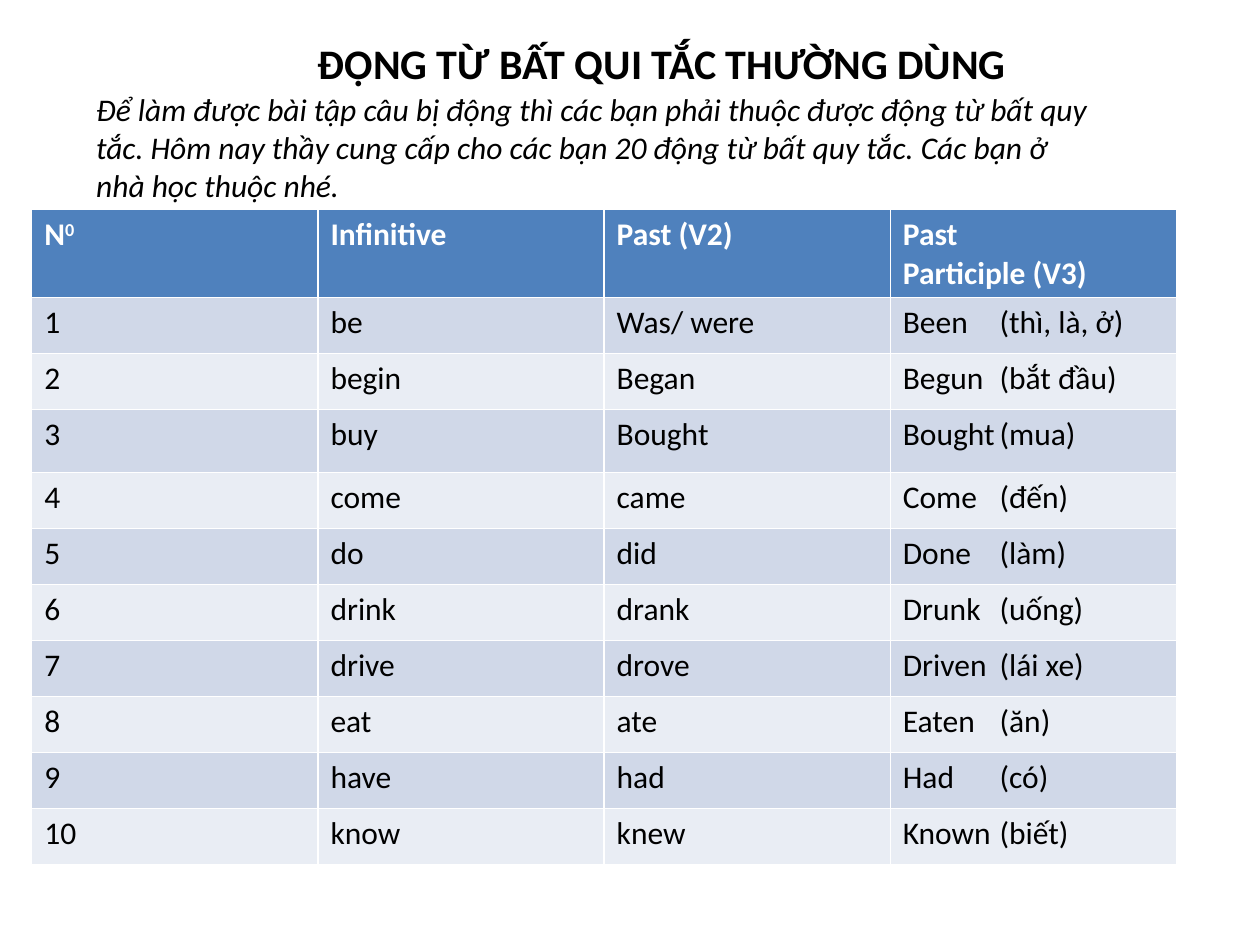
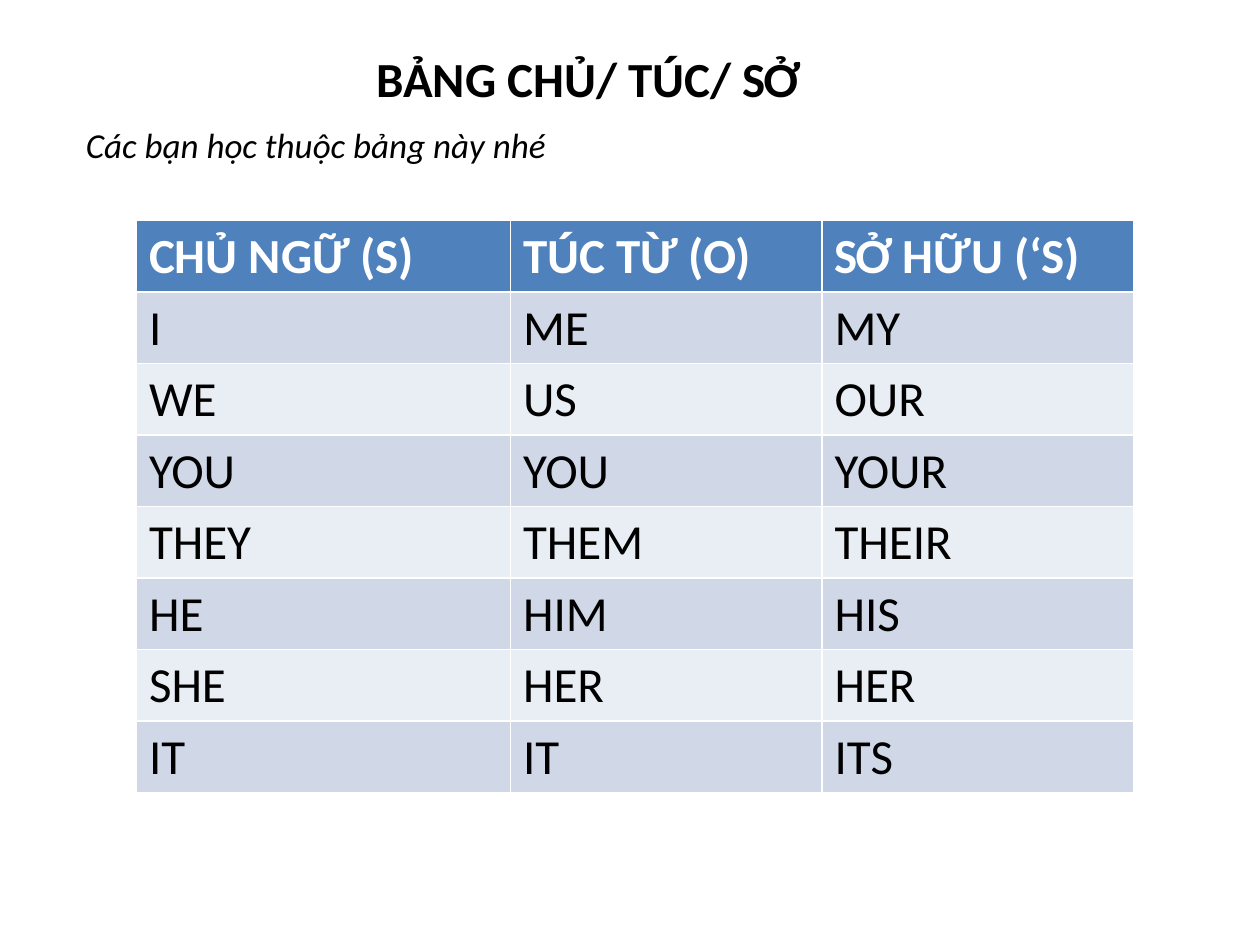
from dataclasses import dataclass

import pptx
import pptx.dml.color
import pptx.enum.text
import pptx.oxml
import pptx.oxml.ns
import pptx.presentation
import pptx.slide
import pptx.text.text
import pptx.util
from lxml import etree

Cm = pptx.util.Cm
FONT = "Calibri"
HUES = {"head": "4F81BD", "odd": "D0D8E8", "even": "E9EDF4", "ink": "000000", "white": "FFFFFF"}


@dataclass
class Label:
    text: str
    left: float
    top: float
    width: float
    height: float
    size: int
    bold: bool = False
    slant: bool = False
    center: bool = False


@dataclass
class Grid:
    left: float
    top: float
    widths: list[float]
    heights: list[float]
    size: int
    rows: list[tuple[str, ...]]
    tab: float = 0


VERBS = [
    ("be", "Was/ were", "Been", "thì, là, ở"),
    ("begin", "Began", "Begun", "bắt đầu"),
    ("buy", "Bought", "Bought", "mua"),
    ("come", "came", "Come", "đến"),
    ("do", "did", "Done", "làm"),
    ("drink", "drank", "Drunk", "uống"),
    ("drive", "drove", "Driven", "lái xe"),
    ("eat", "ate", "Eaten", "ăn"),
    ("have", "had", "Had", "có"),
    ("know", "knew", "Known", "biết"),
]

PRONOUNS = [
    ("CHỦ NGỮ (S)", "TÚC TỪ (O)", "SỞ HỮU (‘S)"),
    ("I", "ME", "MY"),
    ("WE", "US", "OUR"),
    ("YOU", "YOU", "YOUR"),
    ("THEY", "THEM", "THEIR"),
    ("HE", "HIM", "HIS"),
    ("SHE", "HER", "HER"),
    ("IT", "IT", "ITS"),
]


def tint(hue: str) -> pptx.dml.color.RGBColor:
    return pptx.dml.color.RGBColor.from_string(HUES[hue])


def style(frame: pptx.text.text.TextFrame, size: int, hue: str,
          bold: bool = False, slant: bool = False) -> None:
    for para in frame.paragraphs:
        for run in para.runs:
            run.font.name = FONT
            run.font.size = pptx.util.Pt(size)
            run.font.bold = bold
            run.font.italic = slant
            run.font.color.rgb = tint(hue)


def set_tab(para: pptx.text.text._Paragraph, place: float) -> None:
    stops = etree.SubElement(para._p.get_or_add_pPr(), pptx.oxml.ns.qn("a:tabLst"))
    etree.SubElement(stops, pptx.oxml.ns.qn("a:tab"), pos=str(Cm(place)), algn="l")


def add_label(slide: pptx.slide.Slide, label: Label) -> None:
    box = slide.shapes.add_textbox(Cm(label.left), Cm(label.top), Cm(label.width), Cm(label.height))
    frame = box.text_frame
    frame.word_wrap = True
    frame.auto_size = pptx.enum.text.MSO_AUTO_SIZE.SHAPE_TO_FIT_TEXT
    frame.text = label.text
    align = pptx.enum.text.PP_ALIGN
    frame.paragraphs[0].alignment = align.CENTER if label.center else align.LEFT
    style(frame, label.size, "ink", label.bold, label.slant)


def add_grid(slide: pptx.slide.Slide, grid: Grid) -> pptx.table.Table:
    table = slide.shapes.add_table(
        len(grid.rows), len(grid.widths), Cm(grid.left), Cm(grid.top),
        Cm(sum(grid.widths)), Cm(sum(grid.heights))).table
    for col, width in zip(table.columns, grid.widths):
        col.width = Cm(width)
    for row, height in zip(table.rows, grid.heights):
        row.height = Cm(height)
    for r, words in enumerate(grid.rows):
        band = "head" if r == 0 else "odd" if r % 2 else "even"
        for c, word in enumerate(words):
            cell = table.cell(r, c)
            cell.fill.solid()
            cell.fill.fore_color.rgb = tint(band)
            cell.text_frame.text = word
            if "\t" in word:
                set_tab(cell.text_frame.paragraphs[0], grid.tab)
            style(cell.text_frame, grid.size, "ink" if r else "white", bold=r == 0)
    return table


def raise_zero(cell: pptx.table._Cell, size: int) -> None:
    run = cell.text_frame.paragraphs[0].add_run()
    run.text = "0"
    style(cell.text_frame, size, "white", bold=True)
    run._r.get_or_add_rPr().set("baseline", "30000")


def add_verbs(deck: pptx.presentation.Presentation) -> None:
    slide = deck.slides.add_slide(deck.slide_layouts[6])
    add_label(slide, Label("ĐỘNG TỪ BẤT QUI TẮC THƯỜNG DÙNG", 3.39, 0.64, 19.9, 1.28, 24,
                           bold=True, center=True))
    rows = [("N", "Infinitive", "Past (V2)", "Past\nParticiple (V3)")]
    for i, (base, past, third, sense) in enumerate(VERBS, 1):
        rows.append((str(i), base, past, f"{third}\t({sense})"))
    heights = [1.75] + [1.13] * len(VERBS)
    heights[3] = 1.27
    grid = Grid(0.64, 4.22, [5.77] * 4, heights, 18, rows, tab=1.95)
    table = add_grid(slide, grid)
    raise_zero(table.cell(0, 0), grid.size)
    add_label(slide, Label(
        "Để làm được bài tập câu bị động thì các bạn phải thuộc được động từ bất quy tắc. "
        "Hôm nay thầy cung cấp cho các bạn 20 động từ bất quy tắc. "
        "Các bạn ở nhà học thuộc nhé.", 1.69, 1.69, 20.74, 2.57, 18, slant=True))


def add_pronouns(deck: pptx.presentation.Presentation) -> None:
    slide = deck.slides.add_slide(deck.slide_layouts[6])
    add_grid(slide, Grid(2.75, 4.45, [7.54, 6.28, 6.28], [1.44] * len(PRONOUNS), 28, PRONOUNS))
    add_label(slide, Label("BẢNG CHỦ/ TÚC/ SỞ", 2.33, 0.85, 19.05, 1.45, 28,
                           bold=True, center=True))
    add_label(slide, Label("Các bạn học thuộc bảng này nhé", 1.48, 2.36, 22.01, 1.11, 20,
                           slant=True))


def main() -> None:
    deck = pptx.Presentation()
    deck.slide_width, deck.slide_height = Cm(25.4), Cm(19.05)
    add_verbs(deck)
    add_pronouns(deck)
    deck.save("out.pptx")


if __name__ == "__main__":
    main()
